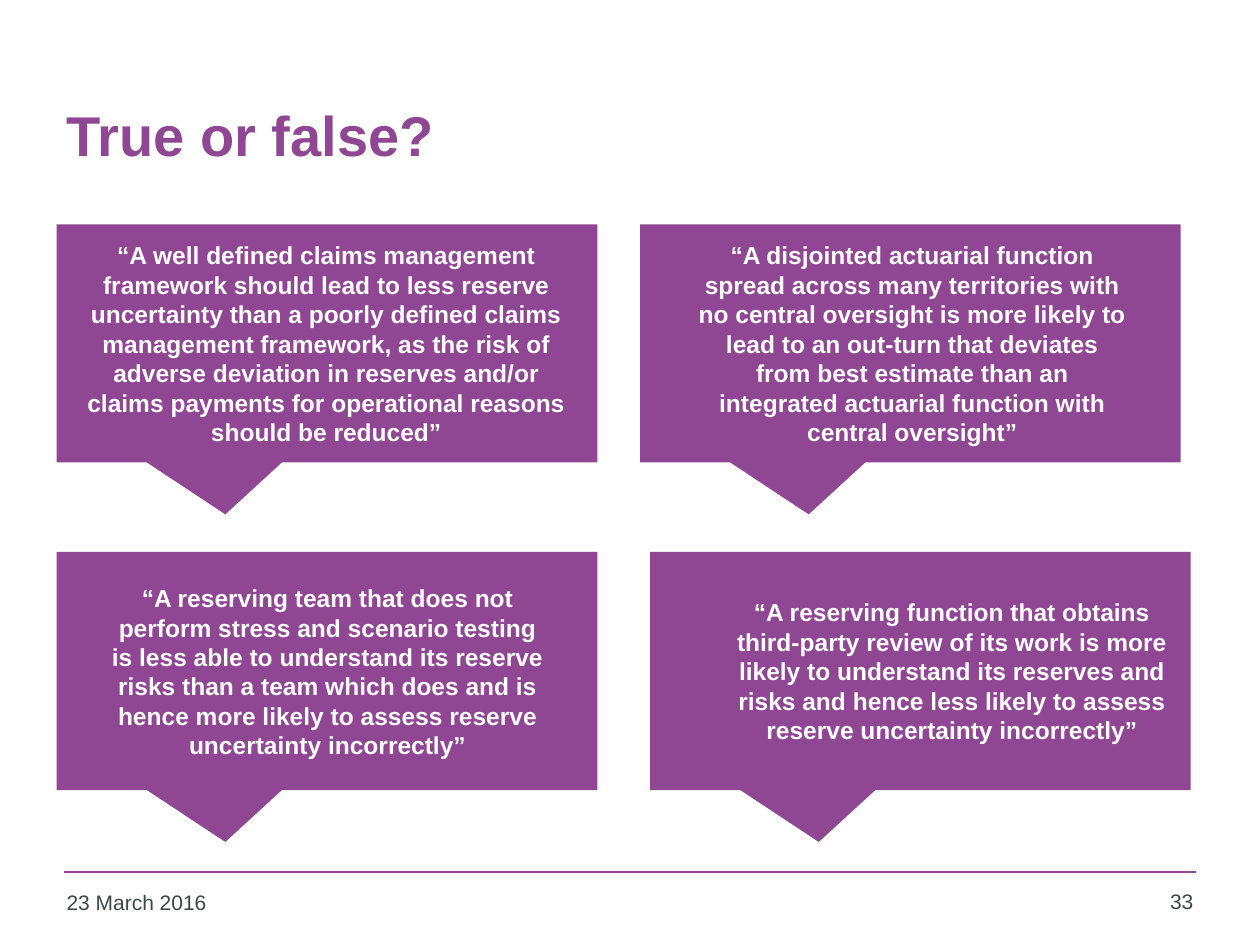
from dataclasses import dataclass
from typing import Any, Optional

from lxml import etree
from pptx import Presentation
from pptx import util as u
from pptx.dml import color
from pptx.enum import shapes, text
from pptx.oxml import ns


@dataclass(frozen=True)
class Theme:
    purple: color.RGBColor = color.RGBColor(0x8F, 0x46, 0x93)
    grey: color.RGBColor = color.RGBColor(0x3F, 0x45, 0x48)
    white: color.RGBColor = color.RGBColor(0xFF, 0xFF, 0xFF)
    font: str = "Arial"
    title_size: int = 32
    quote_size: int = 14
    footer_size: int = 12


@dataclass(frozen=True)
class Area:
    left: float
    top: float
    width: float
    height: float

    def lengths(self) -> list[u.Length]:
        return [u.Inches(side) for side in (self.left, self.top, self.width, self.height)]


@dataclass(frozen=True)
class Style:
    size: int
    color: color.RGBColor
    bold: bool = False
    align: text.PP_ALIGN = text.PP_ALIGN.LEFT
    anchor: text.MSO_ANCHOR = text.MSO_ANCHOR.TOP


@dataclass(frozen=True)
class Quote:
    left: float
    top: float
    words: str
    text_at: Optional[tuple[float, float]] = None
    indent: float = 0.5


THEME = Theme()
CENTER, RIGHT = text.PP_ALIGN.CENTER, text.PP_ALIGN.RIGHT
MIDDLE = text.MSO_ANCHOR.MIDDLE
TITLE = Style(THEME.title_size, THEME.purple, bold=True, anchor=MIDDLE)
DATE = Style(THEME.footer_size, THEME.grey)
NUMBER = Style(THEME.footer_size, THEME.grey, align=RIGHT)
QUOTE = Style(THEME.quote_size, THEME.white, bold=True, align=CENTER)
INNER_QUOTE = Style(THEME.quote_size, THEME.white, bold=True, align=CENTER, anchor=MIDDLE)

CALLOUT_SIZE = (4.29, 1.89)
QUOTE_SIZE = (4.14, 1.5)
POINTER = (-0.188, 0.718)
INSET = 0.1
UPPER, LOWER = 1.78, 4.38

QUOTES = (
    Quote(0.45, UPPER, "“A well defined claims management framework should lead to less "
          "reserve uncertainty than a poorly defined claims management framework, as the "
          "risk of adverse deviation in reserves and/or claims payments for operational "
          "reasons should be reduced”", (0.52, 1.86), 0),
    Quote(5.08, UPPER, "“A disjointed actuarial function spread across many territories "
          "with no central oversight is more likely to lead to an out-turn that deviates "
          "from best estimate than an integrated actuarial function with central "
          "oversight”", (4.92, 1.86)),
    Quote(0.45, LOWER, "“A reserving team that does not perform stress and scenario testing "
          "is less able to understand its reserve risks than a team which does and is hence "
          "more likely to assess reserve uncertainty incorrectly”", (0.28, 4.58)),
    Quote(5.16, LOWER, "“A reserving function that obtains third-party review of its work is "
          "more likely to understand its reserves and risks and hence less likely to assess "
          "reserve uncertainty incorrectly”"),
)


def apply(target: Any, values: dict[str, Any]) -> None:
    for name, value in values.items():
        setattr(target, name, value)


def write(box: Any, words: str, style: Style, indent: float = 0) -> None:
    frame = box.text_frame
    apply(frame, {"word_wrap": True, "vertical_anchor": style.anchor,
                  "margin_left": u.Inches(INSET + indent)})
    para = frame.paragraphs[0]
    para.alignment = style.align
    span = para.add_run()
    span.text = words
    apply(span.font, {"name": THEME.font, "size": u.Pt(style.size), "bold": style.bold})
    span.font.color.rgb = style.color


def add_text(page: Any, area: Area, words: str, style: Style, indent: float = 0) -> None:
    write(page.shapes.add_textbox(*area.lengths()), words, style, indent)


def add_quote(page: Any, quote: Quote) -> None:
    area = Area(quote.left, quote.top, *CALLOUT_SIZE)
    callout = page.shapes.add_shape(
        shapes.MSO_SHAPE.RECTANGULAR_CALLOUT, *area.lengths())
    callout.shadow.inherit = False
    callout.fill.solid()
    callout.fill.fore_color.rgb = THEME.purple
    callout.line.fill.background()
    for index, value in enumerate(POINTER):
        callout.adjustments[index] = value
    if quote.text_at:
        add_text(page, Area(*quote.text_at, *QUOTE_SIZE), quote.words, QUOTE, quote.indent)
    else:
        write(callout, quote.words, INNER_QUOTE, quote.indent)


def add_rule(page: Any, left: float, right: float, top: float) -> None:
    rule = page.shapes.add_connector(
        shapes.MSO_CONNECTOR.STRAIGHT,
        u.Inches(left), u.Inches(top), u.Inches(right), u.Inches(top))
    rule.line.color.rgb = THEME.purple
    rule.line.width = u.Pt(1)
    etree.SubElement(rule._element.spPr, ns.qn("a:effectLst"))


def main() -> None:
    deck = Presentation()
    apply(deck, {"slide_width": u.Inches(10), "slide_height": u.Inches(7.5)})
    page = deck.slides.add_slide(deck.slide_layouts[6])
    add_rule(page, 0.51, 9.49, 6.92)
    add_text(page, Area(0.43, 0.44, 9.07, 1.25), "True or false?", TITLE)
    add_text(page, Area(0.43, 7.01, 2.2, 0.36), "23 March 2016", DATE)
    add_text(page, Area(8.86, 7, 0.71, 0.37), "33", NUMBER)
    for quote in QUOTES:
        add_quote(page, quote)
    deck.save("out.pptx")


if __name__ == "__main__":
    main()
